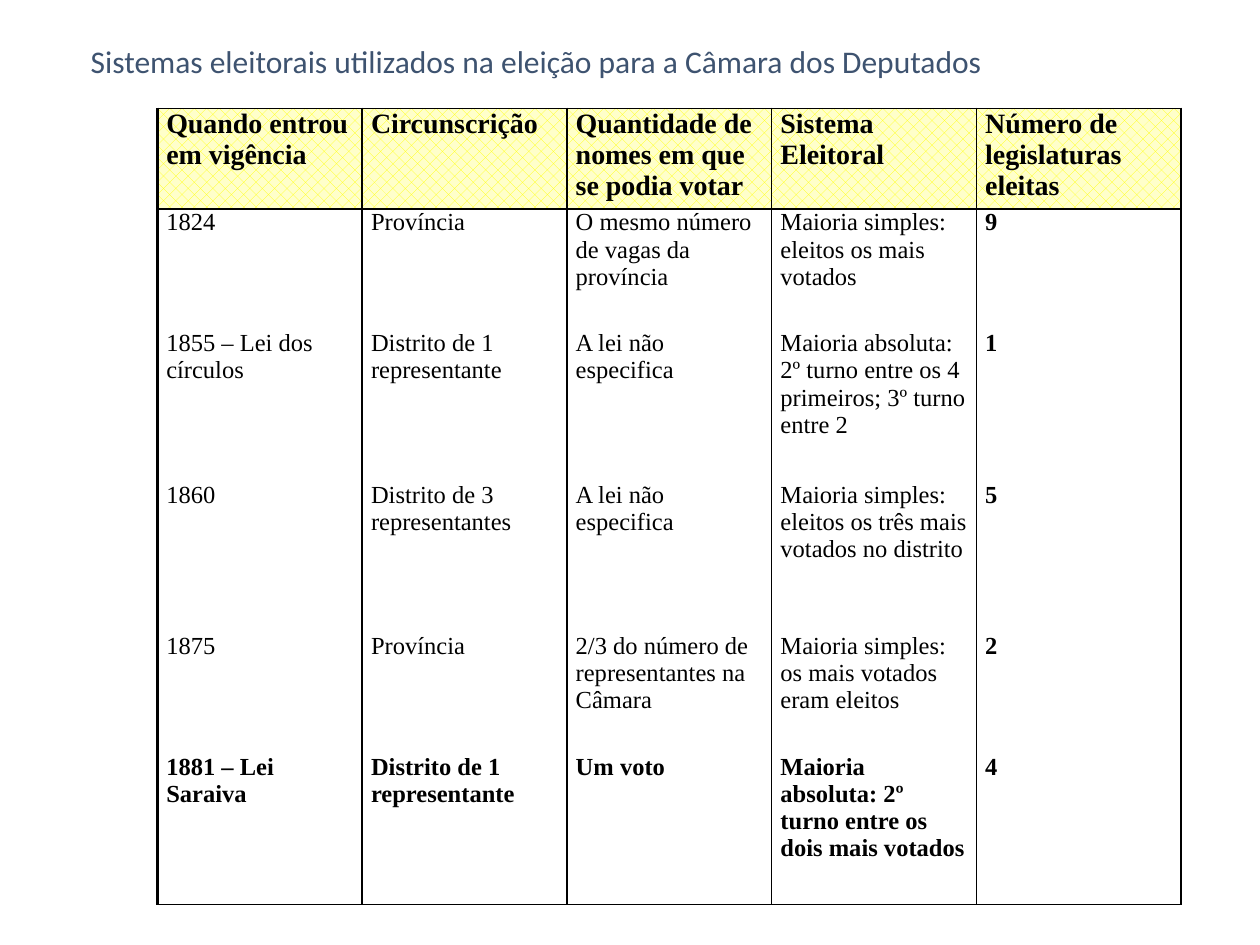
from dataclasses import dataclass

from lxml import etree
from pptx import Presentation
from pptx import util as u
from pptx.dml import color as c
from pptx.enum import dml, text
from pptx.oxml import ns


@dataclass(frozen=True)
class Theme:
    title: str = "3E5370"
    ink: str = "000000"
    dots: str = "FFFF00"
    cream: str = "FFFFCA"
    sans: str = "Calibri"
    serif: str = "Times New Roman"
    title_pt: int = 18
    head_pt: int = 16
    body_pt: int = 14
    thin: float = 1
    thick: float = 1.5


@dataclass(frozen=True)
class Row:
    high: float
    words: tuple[str, ...]
    bold: bool = False


T = Theme()
WIDE, HIGH = 10, 7.5
COLS = 5
LEFT, TOP, SPAN = 0.125 * WIDE, 0.86, 0.8125 * WIDE
SHORT, TALL = 0.96, 1.2

ROWS = [
    Row(0.8, ("Quando entrou em vigência", "Circunscrição",
              "Quantidade de nomes em que se podia votar", "Sistema Eleitoral",
              "Número de legislaturas eleitas"), True),
    Row(SHORT, ("1824", "Província", "O mesmo número de vagas da província",
                "Maioria simples: eleitos os mais votados", "9")),
    Row(TALL, ("1855 – Lei dos círculos", "Distrito de 1 representante",
               "A lei não especifica",
               "Maioria absoluta: 2º turno entre os 4 primeiros; 3º turno entre 2",
               "1")),
    Row(TALL, ("1860", "Distrito de 3 representantes", "A lei não especifica",
               "Maioria simples: eleitos os três mais votados no distrito", "5")),
    Row(SHORT, ("1875", "Província", "2/3 do número de representantes na Câmara",
                "Maioria simples: os mais votados eram eleitos", "2")),
    Row(TALL, ("1881 – Lei Saraiva", "Distrito de 1 representante", "Um voto",
               "Maioria absoluta: 2º turno entre os dois mais votados", "4"), True),
]


def write(frame, words: str, font: str, size: int, ink: str, bold: bool) -> None:
    run = frame.paragraphs[0].add_run()
    run.text = words
    run.font.name = font
    run.font.size = u.Pt(size)
    run.font.bold = bold
    run.font.color.rgb = c.RGBColor.from_string(ink)


def edge(cell, side: str, pos: int, width: float) -> None:
    """Put one border before the fill; zero width hides it."""
    line = etree.Element(ns.qn(f"a:ln{side}"), w=str(int(u.Pt(width))))
    if width:
        fill = etree.SubElement(line, ns.qn("a:solidFill"))
        etree.SubElement(fill, ns.qn("a:srgbClr"), val=T.ink)
    else:
        etree.SubElement(line, ns.qn("a:noFill"))
    cell._tc.get_or_add_tcPr().insert(pos, line)


def draw_cell(cell, row: int, col: int) -> None:
    head, last = row == 0, col == COLS - 1
    cell.margin_left = cell.margin_right = u.Inches(0.07)
    cell.margin_top = cell.margin_bottom = 0
    cell.vertical_anchor = text.MSO_ANCHOR.TOP
    write(cell.text_frame, ROWS[row].words[col], T.serif,
          T.head_pt if head else T.body_pt, T.ink, ROWS[row].bold or last)

    if head:
        cell.fill.patterned()
        cell.fill.pattern = dml.MSO_PATTERN.PERCENT_30
        cell.fill.fore_color.rgb = c.RGBColor.from_string(T.dots)
        cell.fill.back_color.rgb = c.RGBColor.from_string(T.cream)
    else:
        cell.fill.background()

    # Only the header and the outer frame have horizontal rules
    sides = {
        "L": T.thick if col == 0 else T.thin,
        "R": T.thick if last else T.thin,
        "T": T.thin if row < 2 else 0,
        "B": T.thin if row in (0, len(ROWS) - 1) else 0,
    }
    for pos, (side, width) in enumerate(sides.items()):
        edge(cell, side, pos, width)


def draw_title(slide) -> None:
    title = slide.shapes.title
    title.left, title.top = u.Inches(0.62), u.Inches(0.23)
    title.width, title.height = u.Inches(9.15), u.Inches(0.55)
    frame = title.text_frame
    frame.word_wrap = True
    frame.auto_size = text.MSO_AUTO_SIZE.NONE
    frame.vertical_anchor = text.MSO_ANCHOR.MIDDLE
    frame.paragraphs[0].alignment = text.PP_ALIGN.LEFT
    frame.paragraphs[0].line_spacing = 0.9
    write(frame, "Sistemas eleitorais utilizados na eleição para a Câmara dos Deputados",
          T.sans, T.title_pt, T.title, False)


def draw_table(slide) -> None:
    total = sum(row.high for row in ROWS)
    grid = slide.shapes.add_table(len(ROWS), COLS, u.Inches(LEFT), u.Inches(TOP),
                                  u.Inches(SPAN), u.Inches(total)).table
    grid.first_row = grid.horz_banding = False
    for col in grid.columns:
        col.width = u.Inches(SPAN / COLS)
    for r, row in enumerate(ROWS):
        grid.rows[r].height = u.Inches(row.high)
        for k in range(COLS):
            draw_cell(grid.cell(r, k), r, k)


def main() -> None:
    deck = Presentation()
    deck.slide_width, deck.slide_height = u.Inches(WIDE), u.Inches(HIGH)
    slide = deck.slides.add_slide(deck.slide_layouts[5])  # Title only
    draw_title(slide)
    draw_table(slide)
    deck.save("out.pptx")


if __name__ == "__main__":
    main()
